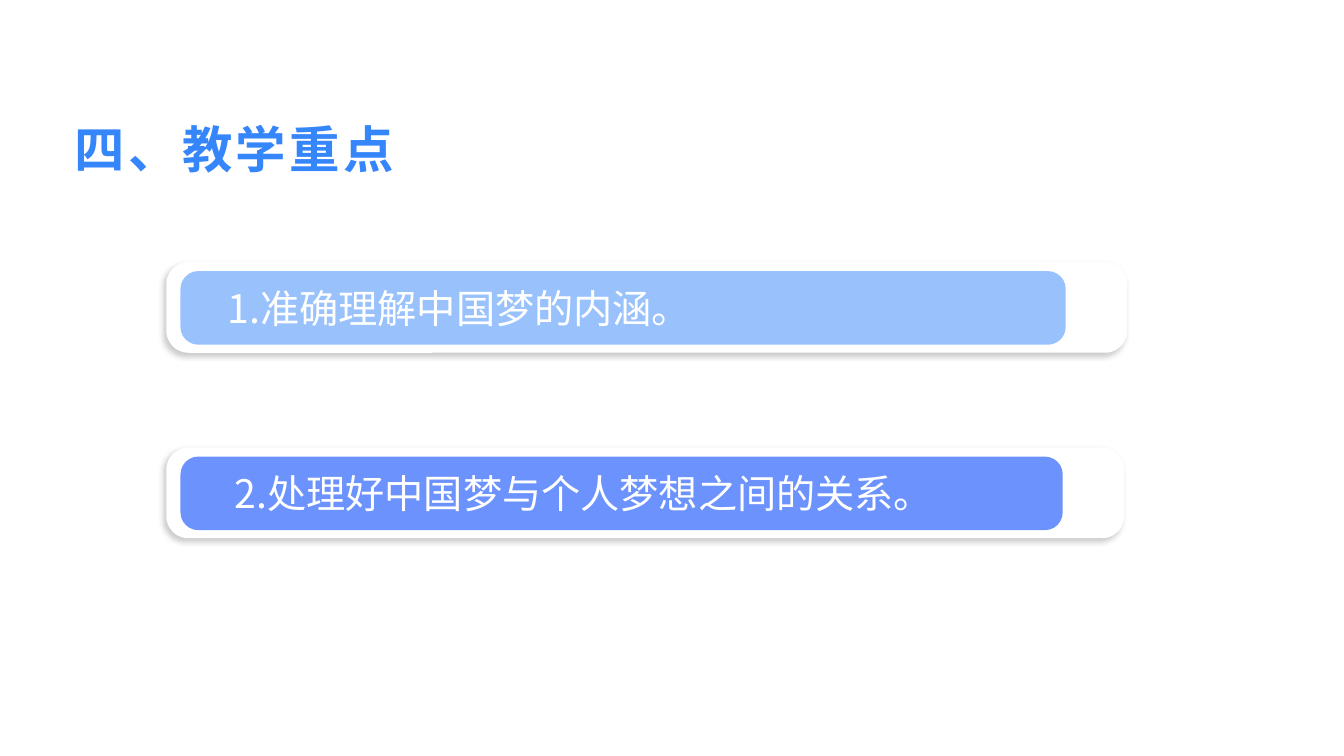
from dataclasses import dataclass

from lxml.etree import SubElement
from pptx import Presentation
from pptx.dml.color import RGBColor
from pptx.enum.shapes import MSO_SHAPE as Preset
from pptx.enum.text import MSO_ANCHOR as Anchor, MSO_AUTO_SIZE as AutoSize, PP_ALIGN as Align
from pptx.oxml.ns import qn
from pptx.shapes.autoshape import Shape
from pptx.shapes.group import GroupShape
from pptx.slide import Slide
from pptx.text.text import TextFrame
from pptx.util import Inches, Pt

FONT = "Noto Sans CJK SC"
COLORS = {
    "title": "3586FB",
    "light_blue": "99C2FD",
    "violet_blue": "6C92FD",
    "white": "FFFFFF",
    "shadow": "000000",
}
CARD_LEFT, CARD_HEIGHT = 1.65, 0.9
BAR_INSET_X, BAR_INSET_Y, BAR_HEIGHT = 0.14, 0.09, 0.73
CARD_EXTRA_WIDTH = 0.75
TEXT_INSET_Y, TEXT_HEIGHT = 0.17, 0.57


@dataclass
class KeyPoint:
    text: str
    top: float
    bar_width: float
    color: str
    text_left: float
    text_width: float


KEY_POINTS = [
    KeyPoint("1.准确理解中国梦的内涵。", 2.6, 8.78, "light_blue", 2.16, 5.43),
    KeyPoint("2.处理好中国梦与个人梦想之间的关系。", 4.44, 8.75, "violet_blue", 2.23, 7.88),
]


def add_text(frame: TextFrame, text: str, size: int, color: str,
             bold: bool = False, spacing: float = 0) -> None:
    para = frame.paragraphs[0]
    para.alignment = Align.LEFT
    span = para.add_run()
    span.text = text
    span.font.name = FONT
    span.font.size = Pt(size)
    span.font.bold = bold
    span.font.color.rgb = RGBColor.from_string(COLORS[color])
    properties = span.font._element
    SubElement(properties, qn("a:ea"), typeface=FONT)
    if spacing:
        properties.set("spc", str(round(spacing * 100)))


def add_rounded(group: GroupShape, left: float, top: float, width: float,
                height: float, color: str) -> Shape:
    box = group.shapes.add_shape(Preset.ROUNDED_RECTANGLE, Inches(left), Inches(top),
                                 Inches(width), Inches(height))
    box.adjustments[0] = 0.242
    box.fill.solid()
    box.fill.fore_color.rgb = RGBColor.from_string(COLORS[color])
    box.line.fill.background()
    box.shadow.inherit = False
    return box


def add_soft_shadow(box: Shape) -> None:
    effects = box._element.spPr.find(qn("a:effectLst"))
    shadow = SubElement(effects, qn("a:outerShdw"), blurRad=str(Pt(4)), dist=str(Pt(3)),
                        dir=str(135 * 60000), algn="tr", rotWithShape="0")
    tint = SubElement(shadow, qn("a:srgbClr"), val=COLORS["shadow"])
    SubElement(tint, qn("a:alpha"), val="20000")


def add_title(page: Slide) -> None:
    title = page.shapes.title
    title.left, title.top = Inches(0.67), Inches(1.06)
    title.width, title.height = Inches(3.7), Inches(0.83)
    frame = title.text_frame
    frame.auto_size = AutoSize.NONE
    frame.word_wrap = True
    frame.vertical_anchor = Anchor.MIDDLE
    frame.margin_left = frame.margin_right = Inches(0.07)
    frame.margin_top = frame.margin_bottom = Inches(0.03)
    add_text(frame, "四、教学重点", 36, "title", bold=True, spacing=2.4)


def add_key_point(page: Slide, point: KeyPoint) -> None:
    # White card with a coloured bar on it
    group = page.shapes.add_group_shape()
    card = add_rounded(group, CARD_LEFT, point.top, point.bar_width + CARD_EXTRA_WIDTH,
                       CARD_HEIGHT, "white")
    add_soft_shadow(card)
    add_rounded(group, CARD_LEFT + BAR_INSET_X, point.top + BAR_INSET_Y,
                point.bar_width, BAR_HEIGHT, point.color)

    # Wording over the bar
    label = page.shapes.add_textbox(Inches(point.text_left), Inches(point.top + TEXT_INSET_Y),
                                    Inches(point.text_width), Inches(TEXT_HEIGHT))
    label.text_frame.word_wrap = True
    label.text_frame.auto_size = AutoSize.SHAPE_TO_FIT_TEXT
    add_text(label.text_frame, point.text, 28, "white")


def main() -> None:
    deck = Presentation()
    deck.slide_width, deck.slide_height = Inches(13.33), Inches(7.5)
    page = deck.slides.add_slide(deck.slide_layouts.get_by_name("Title Only"))
    add_title(page)
    for point in KEY_POINTS:
        add_key_point(page, point)
    deck.save("out.pptx")


if __name__ == "__main__":
    main()
